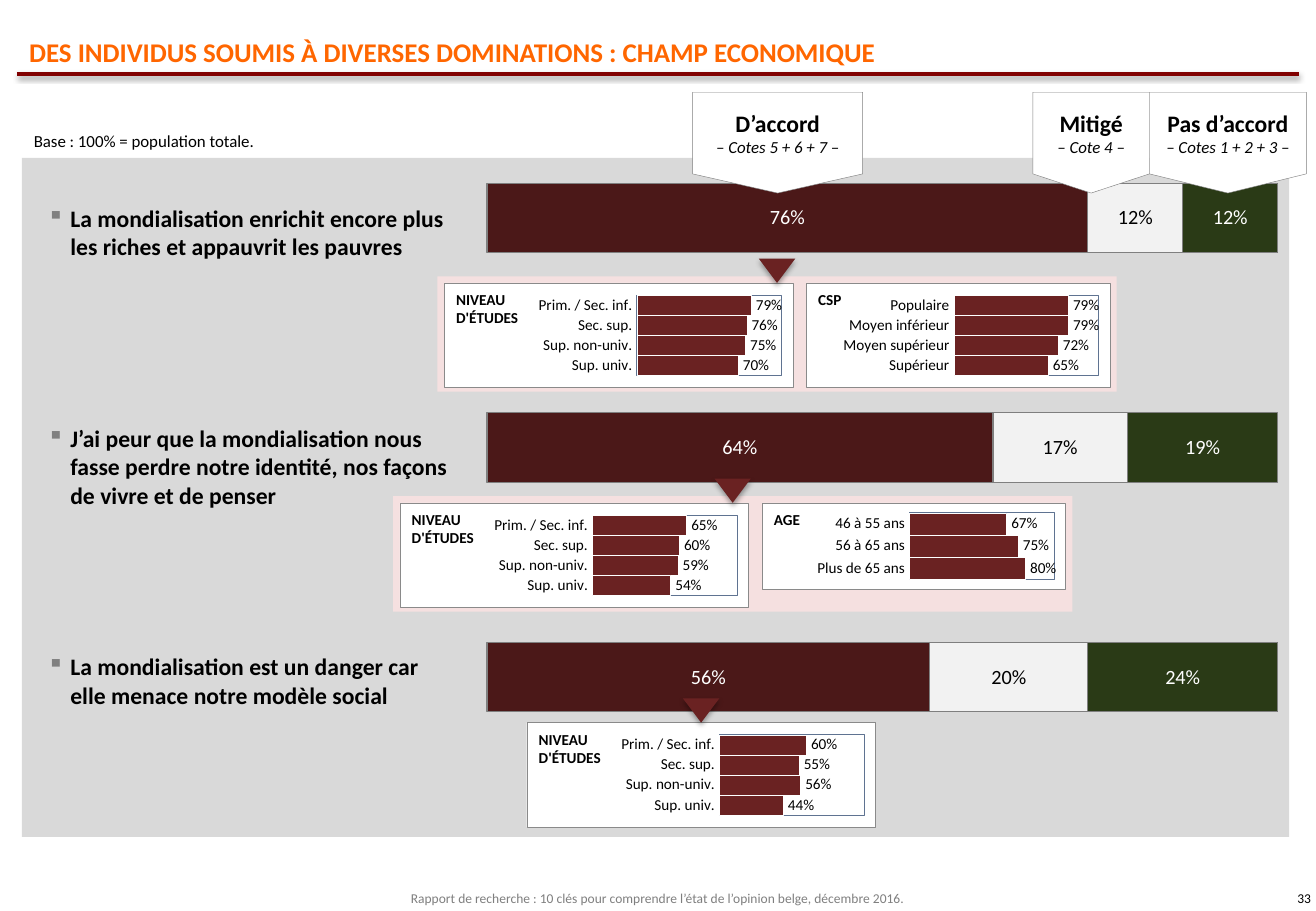
from lxml import etree
from pptx import Presentation
from pptx.chart.data import CategoryChartData
from pptx.dml.color import RGBColor
from pptx.enum.chart import XL_CHART_TYPE, XL_LABEL_POSITION, XL_TICK_MARK
from pptx.enum.shapes import MSO_CONNECTOR, MSO_SHAPE
from pptx.enum.text import MSO_ANCHOR, MSO_AUTO_SIZE, PP_ALIGN
from pptx.oxml import parse_xml
from pptx.oxml.ns import nsdecls, qn
from pptx.util import Inches, Pt

STACKED, CLUSTERED = XL_CHART_TYPE.BAR_STACKED, XL_CHART_TYPE.BAR_CLUSTERED
OUTSIDE, CENTERED = XL_LABEL_POSITION.OUTSIDE_END, XL_LABEL_POSITION.CENTER
NO_TICK = XL_TICK_MARK.NONE
RECTANGLE, TRIANGLE = MSO_SHAPE.RECTANGLE, MSO_SHAPE.ISOSCELES_TRIANGLE
DOWN_ARROW, STRAIGHT = MSO_SHAPE.DOWN_ARROW, MSO_CONNECTOR.STRAIGHT
TOP, MIDDLE, BOTTOM = MSO_ANCHOR.TOP, MSO_ANCHOR.MIDDLE, MSO_ANCHOR.BOTTOM
LEFT, CENTER, RIGHT = PP_ALIGN.LEFT, PP_ALIGN.CENTER, PP_ALIGN.RIGHT

COLORS = {
    "title": "FF6600", "rule": "800000", "text": "000000", "white": "FFFFFF",
    "background": "D9D9D9", "backing": "F5E0E0", "grey": "7F7F7F", "bullet": "808080",
    "panel_line": "8A8A8A", "plot_line": "5F7391", "detail": "6A2222",
    "agree": "4B1818", "mixed": "F2F2F2", "disagree": "2A3A16",
}
# One column or row of the grid is a tenth of an inch
COLUMNS, ROWS = 108.3, 75

# Headers: left, width, title, ratings
HEADERS = [
    (94.6, 12.9, "Pas d’accord", "– Cotes 1 + 2 + 3 –"),
    (85, 9.6, "Mitigé", "– Cote 4 –"),
    (57, 14, "D’accord", "– Cotes 5 + 6 + 7 –"),
]
ANSWERS = [
    ("D’accord", (0.76, 0.64, 0.56), "agree", "white"),
    ("Mitigé", (0.12, 0.17, 0.2), "mixed", "text"),
    ("Pas d’accord", (0.12, 0.19, 0.24), "disagree", "white"),
]
STUDIES = ("Prim. / Sec. inf.", "Sec. sup.", "Sup. non-univ.", "Sup. univ.")
CLASSES = ("Populaire", "Moyen inférieur", "Moyen supérieur", "Supérieur")
AGES = ("46 à 55 ans", "56 à 65 ans", "Plus de 65 ans")
STUDIES_TITLE = "NIVEAU D'ÉTUDES"
# Statements: text, text top, text height, pointer centre, panels (title, width, names, values)
STATEMENTS = [
    ("La mondialisation enrichit encore plus les riches et appauvrit les pauvres",
     16.3, 5.7, 63.95,
     [(STUDIES_TITLE, 28.7, STUDIES, (0.79, 0.76, 0.75, 0.7)),
      ("CSP", 25, CLASSES, (0.79, 0.79, 0.72, 0.65))]),
    ("J’ai peur que la mondialisation nous fasse perdre notre identité, "
     "nos façons de vivre et de penser",
     34.4, 8.1, 60.3,
     [(STUDIES_TITLE, 28.7, STUDIES, (0.65, 0.6, 0.59, 0.54)),
      ("AGE", 25, AGES, (0.67, 0.75, 0.8))]),
    ("La mondialisation est un danger car elle menace notre modèle social",
     53.2, 5.7, 57.7,
     [(STUDIES_TITLE, 28.7, STUDIES, (0.6, 0.55, 0.56, 0.44))]),
]
FIRST_PANEL, PANEL_PITCH, PANEL_GAP, BACKING_MARGIN = 23.3, 18.1, 1.1, 0.55


def grid(*lengths):
    return [Inches(length / 10) for length in lengths]


def color(name):
    return RGBColor.from_string(COLORS[name])


def add_shadow(effects, opacity, distance):
    effects.append(parse_xml(
        f'<a:outerShdw {nsdecls("a")} blurRad="{Pt(3.1)}" dist="{Pt(distance)}" dir="5400000" '
        f'rotWithShape="0"><a:srgbClr val="{COLORS["text"]}">'
        f'<a:alpha val="{opacity * 1000}"/></a:srgbClr></a:outerShdw>'))


class Deck:
    font = "Calibri"

    def __init__(self):
        self.presentation = Presentation()
        self.presentation.slide_width, self.presentation.slide_height = grid(COLUMNS, ROWS)
        self.slide = self.presentation.slides.add_slide(self.presentation.slide_layouts[5])
        self.shapes = self.slide.shapes

    def style(self, font, size, name="text", bold=False, italic=False):
        font.name, font.size, font.bold, font.italic = self.font, Pt(size), bold, italic
        font.color.rgb = color(name)

    def title(self, place, text):
        shape = self.shapes.title
        shape.left, shape.top, shape.width, shape.height = grid(*place)
        frame = shape.text_frame
        frame.text = text
        frame.vertical_anchor, frame.auto_size = BOTTOM, MSO_AUTO_SIZE.NONE
        frame.paragraphs[0].alignment = LEFT
        self.style(frame.paragraphs[0].runs[0].font, 16, "title", bold=True)

    def rule(self, left, right, row):
        line = self.shapes.add_connector(STRAIGHT, *grid(left, row, right, row))
        line.line.color.rgb, line.line.width = color("rule"), Pt(2)
        effects = etree.SubElement(line._element.spPr, qn("a:effectLst"))
        add_shadow(effects, 38, 1.6)

    def text(self, place, text, size, name="text", bold=False, align=LEFT,
             anchor=TOP, inset=None, wrap=True):
        frame = self.shapes.add_textbox(*grid(*place)).text_frame
        frame.text, frame.word_wrap, frame.vertical_anchor = text, wrap, anchor
        if inset is not None:
            frame.margin_left = frame.margin_right = Inches(inset)
            frame.margin_top = frame.margin_bottom = Inches(inset)
        paragraph = frame.paragraphs[0]
        paragraph.alignment = align
        self.style(paragraph.runs[0].font, size, name, bold)
        return paragraph

    def bullet(self, place, text):
        properties = self.text(place, text, 14, bold=True)._p.get_or_add_pPr()
        properties.set("marL", str(Inches(0.19)))
        properties.set("indent", str(-Inches(0.19)))
        bullet_color = etree.SubElement(properties, qn("a:buClr"))
        etree.SubElement(bullet_color, qn("a:srgbClr"), val=COLORS["bullet"])
        etree.SubElement(properties, qn("a:buChar"), char="▪")

    def shape(self, kind, place, fill, line=None):
        shape = self.shapes.add_shape(kind, *grid(*place))
        shape.shadow.inherit = False
        shape.fill.solid()
        shape.fill.fore_color.rgb = color(fill)
        if line:
            shape.line.color.rgb, shape.line.width = color(line), Pt(0.25)
        else:
            shape.line.fill.background()
        return shape

    def header(self, left, width, title, ratings):
        shape = self.shape(DOWN_ARROW, (left, 7.6, width, 8.3), "white", "grey")
        shape.adjustments[0], shape.adjustments[1] = 1, 0.19
        frame = shape.text_frame
        frame.text, frame.vertical_anchor = f"{title}\n{ratings}", MIDDLE
        for paragraph in frame.paragraphs:
            paragraph.alignment = CENTER
        self.style(frame.paragraphs[0].runs[0].font, 14, bold=True)
        self.style(frame.paragraphs[1].runs[0].font, 10, italic=True)

    def pointer(self, center, top):
        shape = self.shape(TRIANGLE, (center - 1.5, top, 3, 2), "detail")
        properties = shape._element.spPr
        properties.get_or_add_xfrm().set("flipV", "1")
        add_shadow(properties.find(qn("a:effectLst")), 35, 1.8)

    def chart(self, kind, place, names, series, plot_box, gap, size, line, position):
        """Draw bars; each series is (name, values, fill, label color)."""
        data = CategoryChartData(number_format="0%")
        data.categories = names
        for name, values, *_ in series:
            data.add_series(name, values)
        chart = self.shapes.add_chart(kind, *grid(*place), data).chart
        chart.has_title = chart.has_legend = False
        self.style(chart.font, size)
        values_axis, names_axis = chart.value_axis, chart.category_axis
        values_axis.minimum_scale, values_axis.maximum_scale = 0, 1
        values_axis.has_major_gridlines = values_axis.visible = False
        names_axis.reverse_order = True
        names_axis.visible = kind == CLUSTERED
        names_axis.major_tick_mark = names_axis.minor_tick_mark = NO_TICK
        names_axis.format.line.fill.background()
        plot = chart.plots[0]
        plot.gap_width, plot.vary_by_categories = gap, False
        plot.overlap = 100 if kind == STACKED else 0
        for bars, (_, _, fill, label_color) in zip(plot.series, series):
            bars.format.fill.solid()
            bars.format.fill.fore_color.rgb = color(fill)
            bars.format.line.color.rgb, bars.format.line.width = color(line[0]), Pt(line[1])
            labels = bars.data_labels
            labels.show_value, labels.position = True, position
            labels.number_format, labels.number_format_is_linked = "0%", False
            self.style(labels.font, size, label_color)
        self.plot_area(chart._chartSpace, plot_box, kind == CLUSTERED)

    def plot_area(self, chart_space, box, framed):
        area = chart_space.chart.plotArea
        for layout in area.findall(qn("c:layout")):
            area.remove(layout)
        sizes = "".join(f'<c:{tag} val="{share}"/>' for tag, share in zip("xywh", box))
        area.insert(0, parse_xml(
            f'<c:layout {nsdecls("c")}><c:manualLayout><c:layoutTarget val="inner"/>'
            f'<c:xMode val="edge"/><c:yMode val="edge"/>{sizes}</c:manualLayout></c:layout>'))
        solid = '<a:solidFill><a:srgbClr val="{}"/></a:solidFill>'
        empty = "<a:noFill/><a:ln><a:noFill/></a:ln>"
        frame = (solid.format(COLORS["white"])
                 + f'<a:ln w="{Pt(0.5)}">{solid.format(COLORS["plot_line"])}</a:ln>')
        wrapper = f'<c:spPr {nsdecls("c", "a")}>{{}}</c:spPr>'
        area.append(parse_xml(wrapper.format(frame if framed else empty)))
        chart_space.find(qn("c:txPr")).addprevious(parse_xml(wrapper.format(empty)))

    def panel(self, left, top, title, width, names, values):
        height = 2.6 + 1.5 * len(names)
        self.shape(RECTANGLE, (left, top, width, height), "white", "panel_line")
        self.chart(CLUSTERED, (left + width - 27.4, top, 28.4, height), names,
                   [(title, values, "detail", "text")], (0.513, 0.116, 0.419, 0.768),
                   0, 9, ("white", 0.25), OUTSIDE)
        title_height = 4 if title == STUDIES_TITLE else 2.5
        self.text((left, top + 0.1, 7.4, title_height), title, 9, bold=True)

    def panels(self, center, top, panels):
        total = sum(panel[1] for panel in panels) + PANEL_GAP * (len(panels) - 1)
        left = center - total / 2
        if len(panels) > 1:
            self.shape(RECTANGLE, (left - BACKING_MARGIN, top - BACKING_MARGIN,
                                   total + 2 * BACKING_MARGIN, 9.5), "backing")
        for panel in panels:
            self.panel(left, top, *panel)
            left += panel[1] + PANEL_GAP
        self.pointer(center, top - 2)


def main():
    deck = Deck()
    # Title and background
    deck.rule(1.4, 106.9, 6.1)
    deck.title((1.4, 2.4, 105.5, 3.7),
               "DES INDIVIDUS SOUMIS À DIVERSES DOMINATIONS : CHAMP ECONOMIQUE")
    deck.shape(RECTANGLE, (1.8, 13, 104.3, 55.9), "background")
    deck.text((1.8, 10.3, 20.7, 2.7), "Base : 100% = population totale.", 10, wrap=False)
    # Overall answers and their headers
    deck.chart(STACKED, (38.4, 8.5, 66.8, 56.7), ("1", "2", "3"), ANSWERS,
               (0.025, 0, 0.975, 1), 230, 12, ("grey", 0.75), CENTERED)
    for header in HEADERS:
        deck.header(*header)
    # Statements with their detail panels
    for index, (text, top, height, center, panels) in enumerate(STATEMENTS):
        deck.bullet((2.9, top, 35.5, height), text)
        deck.panels(center, FIRST_PANEL + index * PANEL_PITCH, panels)
    # Footer
    deck.text((0, 72.9, COLUMNS, 2.1),
              "Rapport de recherche\u00a0: 10 clés pour comprendre l’état de l’opinion belge, "
              "décembre 2016.".replace("\u00a0", " "),
              8, "grey", align=CENTER, anchor=MIDDLE, inset=0.04)
    deck.text((83, 72.9, 25.3, 2.1), "33", 8, align=RIGHT, anchor=MIDDLE, inset=0.04)
    deck.presentation.save("out.pptx")


if __name__ == "__main__":
    main()
